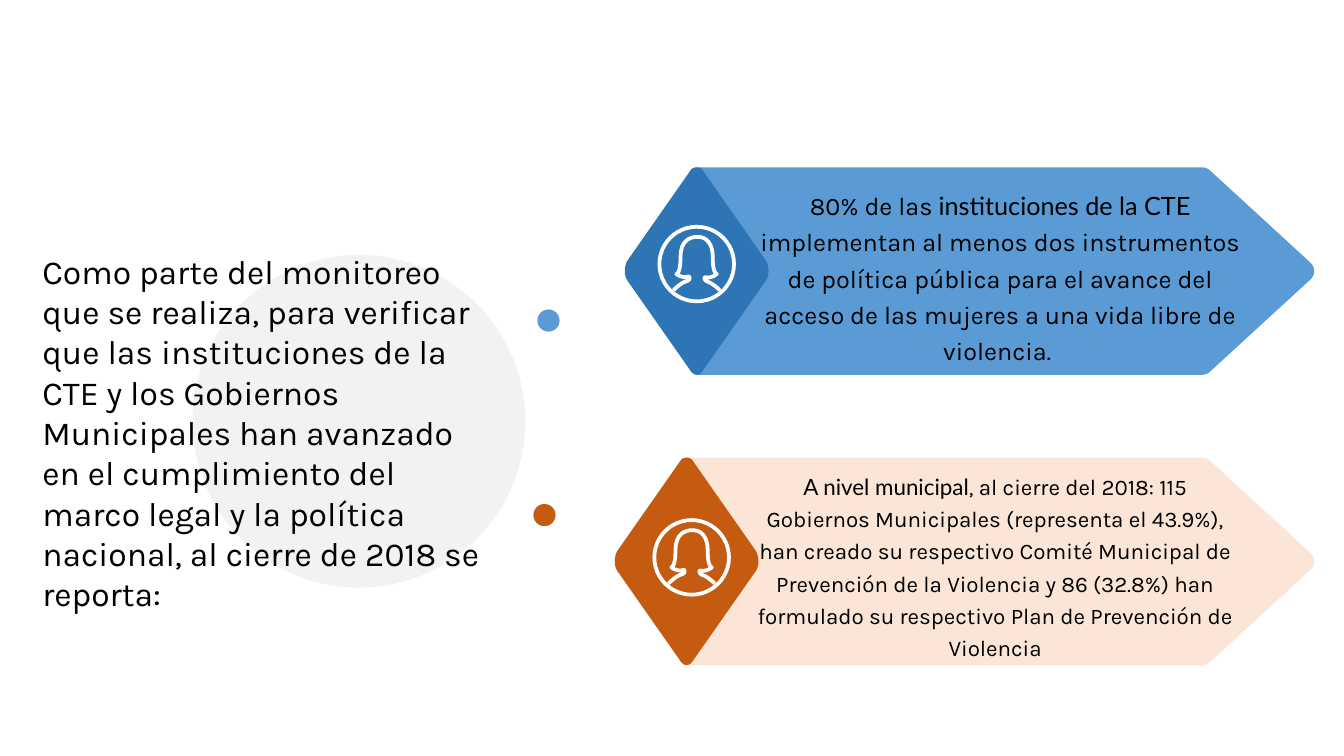
from pptx import Presentation
from pptx.dml.color import RGBColor
from pptx.enum import shapes, text
from pptx.util import Inches, Pt

INTRO = ("Como parte del monitoreo que se realiza, para verificar que las instituciones de la CTE "
         "y los Gobiernos Municipales han avanzado en el cumplimiento del marco legal y la política "
         "nacional, al cierre de 2018 se reporta:")
CIRCLES = [
    (1.91, 2.53, 3.3, "F2F2F2"),
    (5.29, 5, 0.22, "C55A11"),
    (5.33, 3.07, 0.22, "5B9BD5"),
]
BANNERS = [
    dict(top=1.66, diamond_left=6.2, arrow="5B9BD5", diamond="2E75B6", icon=(6.91, 2.62),
         box=(7.51, 1.81, 4.82, 1.82), size=18, before=4,
         spans=[("80% de las ", "Karla"), ("instituciones de la CTE ", "Lato"),
                ("implementan al menos dos instrumentos de política pública para el avance del "
                 "acceso de las mujeres a una vida libre de violencia. ", "Karla")]),
    dict(top=4.54, diamond_left=6.1, arrow="FBE5D6", diamond="C55A11", icon=(6.86, 5.53),
         box=(7.45, 4.62, 4.84, 1.9), size=16, before=3,
         spans=[("A nivel municipal", "Lato"),
                (", al cierre del 2018: 115 Gobiernos Municipales (representa el 43.9%), han creado "
                 "su respectivo Comité Municipal de Prevención de la Violencia y 86 (32.8%) han "
                 "formulado su respectivo Plan de Prevención de Violencia", "Karla")]),
]
ARROW_TIP = [
    [(5.04, 0)],
    [(5.08, 0), (5.11, 0.01), (5.14, 0.04)],
    [(6.12, 0.94)],
    [(6.18, 0.99), (6.18, 1.07), (6.12, 1.12)],
    [(5.14, 2.02)],
    [(5.11, 2.05), (5.08, 2.06), (5.04, 2.06)],
]
DIAMOND = [
    [(0.65, 0.03)],
    [(0.66, 0.01), (0.69, 0), (0.71, 0)],
    [(0.73, 0), (0.76, 0.01), (0.77, 0.03)],
    [(1.4, 0.93)],
    [(1.43, 0.99), (1.43, 1.07), (1.4, 1.12)],
    [(0.77, 2.02)],
    [(0.74, 2.07), (0.68, 2.07), (0.65, 2.02)],
    [(0.02, 1.12)],
    [(-0.01, 1.07), (-0.01, 0.99), (0.02, 0.93)],
]
WOMAN = [
    [(-0.23, 0.26)],
    [(-0.19, 0.22), (-0.14, 0.18), (-0.1, 0.17)],
    [(-0.07, 0.16), (-0.06, 0.14), (-0.08, 0.12)],
    [(-0.1, 0.14), (-0.16, 0.13), (-0.2, 0.1)],
    [(-0.17, 0.08), (-0.16, 0.02), (-0.16, -0.07)],
    [(-0.16, -0.23), (-0.07, -0.27), (0.01, -0.27)],
    [(0.1, -0.27), (0.16, -0.2), (0.16, -0.07)],
    [(0.16, 0.03), (0.17, 0.08), (0.2, 0.1)],
    [(0.16, 0.13), (0.12, 0.14), (0.08, 0.13)],
    [(0.07, 0.15), (0.09, 0.17), (0.12, 0.18)],
    [(0.15, 0.19), (0.2, 0.23), (0.23, 0.26)],
]
ICON_RADIUS = 0.37
ICON_LINE = 2.7
CURVE_STEPS = 8


def color(value):
    return RGBColor.from_string(value)


def paint(shape, fill=None, line=None):
    shape.shadow.inherit = False
    if fill:
        shape.fill.solid()
        shape.fill.fore_color.rgb = color(fill)
    else:
        shape.fill.background()
    if line:
        shape.line.color.rgb = color(line)
        shape.line.width = Pt(ICON_LINE)
    else:
        shape.line.fill.background()


def trace(segments, left, top):
    points = []
    for segment in segments:
        if len(segment) == 1:
            points += segment
            continue
        corners = [points[-1], *segment]
        for step in range(1, CURVE_STEPS + 1):
            t = step / CURVE_STEPS
            weights = ((1 - t) ** 3, 3 * t * (1 - t) ** 2, 3 * t * t * (1 - t), t ** 3)
            points.append(tuple(sum(w * c[axis] for w, c in zip(weights, corners))
                                for axis in (0, 1)))
    return [(Inches(left + x), Inches(top + y)) for x, y in points]


def add_outline(page, segments, left, top, fill=None, line=None):
    start, *rest = trace(segments, left, top)
    builder = page.shapes.build_freeform(*start)
    builder.add_line_segments(rest, close=fill is not None)
    paint(builder.convert_to_shape(), fill, line)


def add_circle(page, left, top, size, fill=None, line=None):
    circle = page.shapes.add_shape(shapes.MSO_SHAPE.OVAL, *map(Inches, (left, top, size, size)))
    paint(circle, fill, line)


def set_frame(frame, margin, anchor):
    frame.word_wrap = True
    frame.auto_size = text.MSO_AUTO_SIZE.NONE
    frame.vertical_anchor = anchor
    frame.margin_left = frame.margin_right = Inches(margin)
    frame.margin_top = frame.margin_bottom = Inches(margin)


def add_banner(page, banner):
    top, left = banner["top"], banner["diamond_left"]
    arrow_start = left + 0.7 - 6.87
    add_outline(page, [[(arrow_start, 0)], *ARROW_TIP, [(arrow_start, 2.06)]],
                6.87, top, banner["arrow"])
    add_outline(page, DIAMOND, left, top, banner["diamond"])

    box = page.shapes.add_textbox(*map(Inches, banner["box"]))
    set_frame(box.text_frame, 0.02, text.MSO_ANCHOR.TOP)
    para = box.text_frame.paragraphs[0]
    para.alignment = text.PP_ALIGN.CENTER
    para.line_spacing = 1.2
    para.space_before = Pt(banner["before"])
    para.font.size = Pt(banner["size"])
    para.font.color.rgb = color("000000")
    for words, font in banner["spans"]:
        span = para.add_run()
        span.text = words
        span.font.name = font

    x, y = banner["icon"]
    add_circle(page, x - ICON_RADIUS, y - ICON_RADIUS, 2 * ICON_RADIUS, line="FFFFFF")
    add_outline(page, WOMAN, x, y, line="FFFFFF")


def place_intro(page):
    title = page.shapes.title
    title.left, title.top, title.width, title.height = map(Inches, (0.42, 2.42, 4.46, 3.73))
    title.text_frame.text = INTRO
    set_frame(title.text_frame, 0, text.MSO_ANCHOR.MIDDLE)
    para = title.text_frame.paragraphs[0]
    para.alignment = text.PP_ALIGN.LEFT
    para.font.size = Pt(24)
    para.font.name = "Karla"
    para.font.color.rgb = color("000000")
    title.element.getparent().append(title.element)


def main():
    deck = Presentation()
    deck.slide_width, deck.slide_height = Inches(13.33), Inches(7.5)
    page = deck.slides.add_slide(deck.slide_layouts[5])
    for left, top, size, fill in CIRCLES:
        add_circle(page, left, top, size, fill)
    for banner in BANNERS:
        add_banner(page, banner)
    place_intro(page)
    deck.save("out.pptx")


if __name__ == "__main__":
    main()
